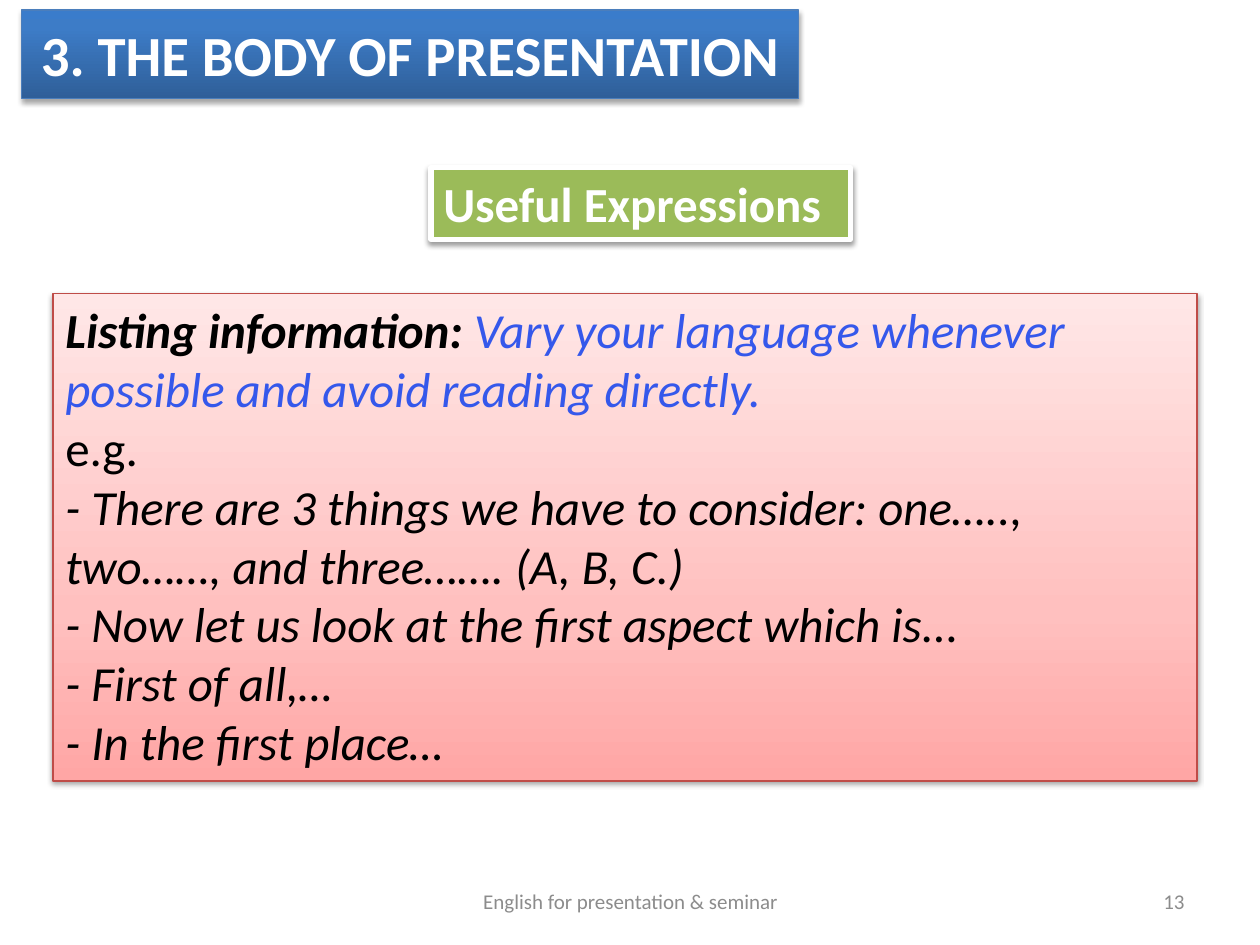
import pptx
import pptx.util
import pptx.dml.color
import pptx.enum.shapes
import pptx.enum.text
import pptx.oxml
import pptx.oxml.ns
from pptx.util import Inches

COLORS = {
    "white": "FFFFFF", "black": "000000", "grey": "8C8C8C", "accent": "3558EB",
    "title_line": "4B7EBC", "green": "9BBB59", "red_line": "BF4C48",
}
TITLE_GRADIENT = [(0, "2F5F99"), (80, "3D7CC7"), (100, "3A7CCB")]
PANEL_GRADIENT = [(0, "FFA6A5"), (35, "FFC0BF"), (100, "FFE7E7")]
ALIGN = pptx.enum.text.PP_ALIGN
ANCHOR = pptx.enum.text.MSO_ANCHOR
EXAMPLES = [
    "- There are 3 things we have to consider: one….., two……, and three……. (A, B, C.)",
    "- Now let us look at the first aspect which is...",
    "- First of all,…",
    "- In the first place…",
]


def rgb(name):
    return pptx.dml.color.RGBColor.from_string(COLORS[name])


def drawing_element(tag, content):
    namespace = pptx.oxml.ns.nsdecls("a")
    return pptx.oxml.parse_xml(f"<a:{tag.format(ns=namespace)}>{content}</a:{tag.split()[0]}>")


def color_element(value, children=""):
    return f'<a:srgbClr val="{value}">{children}</a:srgbClr>'


def set_gradient(shape, stops):
    """Fill from bottom to top through (percent, colour) stops."""
    shape.fill.gradient()
    shape.fill.gradient_angle = 90
    stop_list = shape._element.spPr.find(".//" + pptx.oxml.ns.qn("a:gsLst"))
    for stop in list(stop_list):
        stop_list.remove(stop)
    for percent, value in stops:
        tag = f'gs {{ns}} pos="{percent * 1000}"'
        stop_list.append(drawing_element(tag, color_element(value)))


def set_shadow(shape, distance, opacity):
    """Cast a soft shadow straight down."""
    shape.shadow.inherit = False
    effects = shape._element.spPr.find(pptx.oxml.ns.qn("a:effectLst"))
    blur, offset = pptx.util.Pt(3.1), pptx.util.Pt(distance)
    tag = f'outerShdw {{ns}} blurRad="{blur}" dist="{offset}" dir="5400000" rotWithShape="0"'
    alpha = f'<a:alpha val="{opacity * 1000}"/>'
    effects.append(drawing_element(tag, color_element(COLORS["black"], alpha)))


def add_rectangle(slide, box, line_color, line_width, distance=1.6, opacity=38):
    rectangle = slide.shapes.add_shape(pptx.enum.shapes.MSO_SHAPE.RECTANGLE, *box)
    rectangle.line.color.rgb = rgb(line_color)
    rectangle.line.width = pptx.util.Pt(line_width)
    set_shadow(rectangle, distance, opacity)
    return rectangle


def write_text(shape, paragraphs, size, align=ALIGN.LEFT, anchor=ANCHOR.TOP):
    """Write paragraphs, each a list of (text, colour, font values) runs."""
    frame = shape.text_frame
    frame.word_wrap = True
    frame.vertical_anchor = anchor
    for index, runs in enumerate(paragraphs):
        paragraph = frame.add_paragraph() if index else frame.paragraphs[0]
        paragraph.alignment = align
        for text, color, values in runs:
            run = paragraph.add_run()
            run.text = text
            run.font.color.rgb = rgb(color)
            font_values = {"name": "Calibri", "size": pptx.util.Pt(size), **values}
            for attribute, value in font_values.items():
                setattr(run.font, attribute, value)


def add_title(slide, box):
    banner = add_rectangle(slide, box, "title_line", 0.75, 1.8, 35)
    set_gradient(banner, TITLE_GRADIENT)
    write_text(banner, [[("3. THE BODY OF PRESENTATION", "white", {"bold": True})]],
               32.4, ALIGN.CENTER, ANCHOR.MIDDLE)


def add_subtitle(slide, box):
    label = add_rectangle(slide, box, "white", 3)
    label.fill.solid()
    label.fill.fore_color.rgb = rgb("green")
    write_text(label, [[("Useful Expressions", "white", {"bold": True})]], 28)


def add_expressions(slide, box):
    panel = add_rectangle(slide, box, "red_line", 0.75)
    set_gradient(panel, PANEL_GRADIENT)
    italic = {"italic": True}
    heading = [
        ("Listing information: ", "black", {"bold": True, "italic": True}),
        ("Vary your language whenever possible and avoid reading directly.", "accent", italic),
    ]
    examples = [[(text, "black", italic)] for text in EXAMPLES]
    write_text(panel, [heading, [("e.g.", "black", {})], *examples], 28)


def add_footer(slide, left, top, width, height):
    """Place the centred footer text and the page number at the right edge."""
    number_width = Inches(2.33)
    parts = [
        ("English for presentation & seminar", left, Inches(3.17), ALIGN.CENTER),
        ("13", left + width - number_width, number_width, ALIGN.RIGHT),
    ]
    for text, part_left, part_width, align in parts:
        text_box = slide.shapes.add_textbox(part_left, top, part_width, height)
        write_text(text_box, [[(text, "grey", {})]], 12, align, ANCHOR.MIDDLE)


def main():
    presentation = pptx.Presentation()
    presentation.slide_width = Inches(10)
    presentation.slide_height = Inches(7.5)
    slide = presentation.slides.add_slide(presentation.slide_layouts[6])
    add_title(slide, (Inches(0.17), Inches(0.08), Inches(6.17), Inches(0.7)))
    add_subtitle(slide, (Inches(3.42), Inches(1.33), Inches(3.33), Inches(0.57)))
    add_expressions(slide, (Inches(0.42), Inches(2.33), Inches(9.08), Inches(3.87)))
    add_footer(slide, Inches(3.42), Inches(6.95), Inches(6.08), Inches(0.4))
    presentation.save("out.pptx")


if __name__ == "__main__":
    main()
